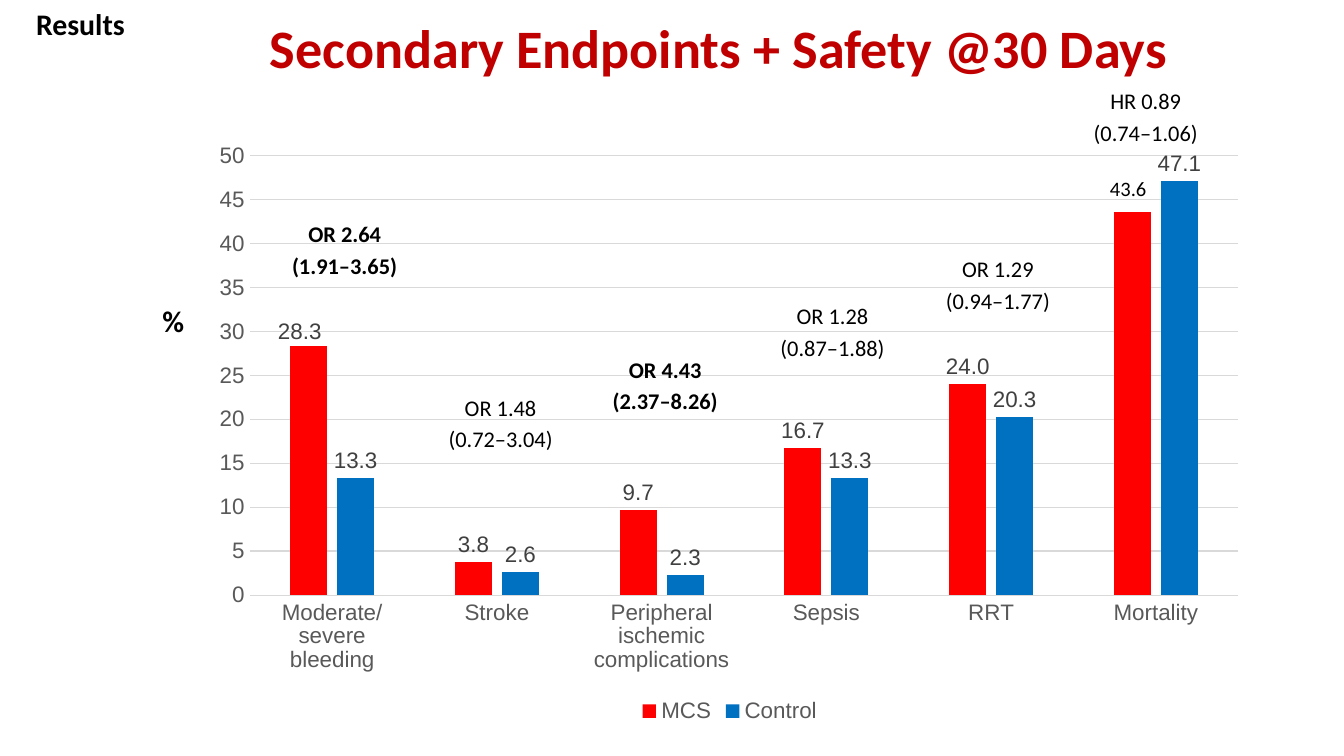
from pptx import Presentation
from pptx.chart.data import CategoryChartData
from pptx.dml.color import RGBColor
from pptx.enum.chart import XL_CHART_TYPE as ChartType
from pptx.enum.chart import XL_LABEL_POSITION as LabelPosition
from pptx.enum.chart import XL_LEGEND_POSITION as LegendPosition
from pptx.enum.chart import XL_TICK_MARK as TickMark
from pptx.enum.text import MSO_ANCHOR as Anchor
from pptx.enum.text import MSO_AUTO_SIZE as AutoSize
from pptx.enum.text import PP_ALIGN as Align
from pptx.oxml import parse_xml
from pptx.oxml.ns import nsdecls, qn
from pptx.util import Inches, Pt

COLORS = {
    "title": "C00000",
    "text": "000000",
    "axis": "595959",
    "grid": "D9D9D9",
    "label": "404040",
    "MCS": "FF0000",
    "Control": "0070C0",
}

CATEGORIES = [
    "Moderate/severe bleeding", "Stroke", "Peripheral ischemic complications",
    "Sepsis", "RRT", "Mortality",
]
RATES = {
    "MCS": (28.3, 3.8, 9.7, 16.7, 24.0, 43.6),
    "Control": (13.3, 2.6, 2.3, 13.3, 20.3, 47.1),
}
RATIOS = [
    (2.01, 1.59, 1.07, "OR 2.64", "(1.91–3.65)", True),
    (3.19, 2.88, 1.03, "OR 1.48", "(0.72–3.04)", False),
    (4.41, 2.60, 1.04, "OR 4.43", "(2.37–8.26)", True),
    (5.66, 2.20, 1.03, "OR 1.28", "(0.87–1.88)", False),
    (6.89, 1.85, 1.03, "OR 1.29", "(0.94–1.77)", False),
    (7.99, 0.60, 1.03, "HR 0.89", "(0.74–1.06)", False),
]


def color(name):
    return RGBColor.from_string(COLORS[name])


def manual_layout(target="", **values):
    inner = f'<c:layoutTarget val="{target}"/>' if target else ""
    if target:
        inner += '<c:xMode val="edge"/><c:yMode val="edge"/>'
    inner += "".join(f'<c:{key} val="{value}"/>' for key, value in values.items())
    return parse_xml(
        f'<c:layout {nsdecls("c")}><c:manualLayout>{inner}</c:manualLayout></c:layout>'
    )


class SlideBuilder:
    text_font = "Calibri"
    chart_font = "Arial"

    def __init__(self, slide):
        self.slide = slide

    def style(self, font, name, size, shade, bold=False):
        font.name = name
        font.size = Pt(size)
        font.bold = bold
        font.color.rgb = color(shade)

    def title(self, text, left, top, width, height):
        box = self.slide.shapes.title
        box.left, box.top = Inches(left), Inches(top)
        box.width, box.height = Inches(width), Inches(height)
        frame = box.text_frame
        frame.margin_left = frame.margin_right = 0
        frame.margin_top = frame.margin_bottom = 0
        frame.vertical_anchor = Anchor.BOTTOM
        frame.auto_size = AutoSize.NONE
        frame.word_wrap = True
        para = frame.paragraphs[0]
        para.alignment = Align.CENTER
        span = para.add_run()
        span.text = text
        self.style(span.font, self.text_font, 29, "title", True)

    def label(self, lines, left, top, width, height, size, bold=False, align=Align.LEFT):
        box = self.slide.shapes.add_textbox(
            Inches(left), Inches(top), Inches(width), Inches(height))
        frame = box.text_frame
        frame.word_wrap = True
        frame.auto_size = AutoSize.SHAPE_TO_FIT_TEXT
        for index, line in enumerate(lines):
            para = frame.add_paragraph() if index else frame.paragraphs[0]
            para.alignment = align
            para._p.get_or_add_pPr().set("marL", str(Inches(0.04)))
            if index:
                para.space_before = Pt(2.4)
            span = para.add_run()
            span.text = line
            self.style(span.font, self.text_font, size, "text", bold)

    def column_chart(self, left, top, width, height):
        data = CategoryChartData(number_format="0.0")
        data.categories = CATEGORIES
        for name, values in RATES.items():
            data.add_series(name, values)
        chart = self.slide.shapes.add_chart(
            ChartType.COLUMN_CLUSTERED, Inches(left), Inches(top),
            Inches(width), Inches(height), data).chart
        self.style(chart.font, self.chart_font, 10, "text")
        chart.has_title = False
        chart.has_legend = True
        chart.legend.position = LegendPosition.BOTTOM
        chart.legend.include_in_layout = False
        self.style(chart.legend.font, self.chart_font, 12, "axis")
        self.axes(chart)
        self.columns(chart.plots[0])
        plot_area = chart._chartSpace.chart.plotArea
        for layout in plot_area.findall(qn("c:layout")):
            plot_area.remove(layout)
        plot_area.insert(0, manual_layout("inner", x=0.048, y=0.04, w=0.931, h=0.737))

    def axes(self, chart):
        for axis in (chart.category_axis, chart.value_axis):
            axis.major_tick_mark = axis.minor_tick_mark = TickMark.NONE
            self.style(axis.tick_labels.font, self.chart_font, 12, "axis")
        values = chart.value_axis
        values.minimum_scale, values.maximum_scale, values.major_unit = 0, 50, 5
        values.tick_labels.number_format = "0"
        values.tick_labels.number_format_is_linked = False
        values.format.line.fill.background()
        values.has_major_gridlines = True
        for item in (chart.category_axis, values.major_gridlines):
            item.format.line.color.rgb = color("grid")
            item.format.line.width = Pt(0.75)

    def columns(self, plot):
        plot.gap_width, plot.overlap = 219, -27
        plot.vary_by_categories = False
        for series in plot.series:
            series.invert_if_negative = False
            series.format.fill.solid()
            series.format.fill.fore_color.rgb = color(series.name)
            labels = series.data_labels
            labels.show_value = True
            labels.number_format = "0.0"
            labels.number_format_is_linked = False
            labels.position = LabelPosition.OUTSIDE_END
            self.style(labels.font, self.chart_font, 12, "label")
        treated = plot.series[0]
        bleeding = treated.points[0].data_label
        bleeding.position = LabelPosition.OUTSIDE_END
        self.style(bleeding.font, self.chart_font, 12, "label")
        holder = treated.data_labels._element
        holder.find(qn("c:dLbl")).insert(1, manual_layout(x=-0.0085, y=0.005))
        holder.insert(1, parse_xml(
            f'<c:dLbl {nsdecls("c")}><c:idx val="5"/><c:delete val="1"/></c:dLbl>'))


def main():
    deck = Presentation()
    deck.slide_width, deck.slide_height = Inches(10), Inches(10 * 9 / 16)
    page = SlideBuilder(deck.slides.add_slide(deck.slide_layouts[5]))
    page.title("Secondary Endpoints + Safety @30 Days", 0.98, -0.04, 8.74, 0.63)
    page.label(["Results"], 0.13, -0.01, 0.91, 0.37, 16, True)
    page.column_chart(1.48, 0.98, 7.9, 4.44)
    page.label(["%"], 1.07, 2.2, 0.41, 0.37, 16, True)
    page.label(["43.6"], 8.12, 1.26, 0.52, 0.29, 11)
    for left, top, width, ratio, interval, bold in RATIOS:
        page.label([ratio, interval], left, top, width, 0.55, 12, bold, Align.CENTER)
    deck.save("out.pptx")


if __name__ == "__main__":
    main()
